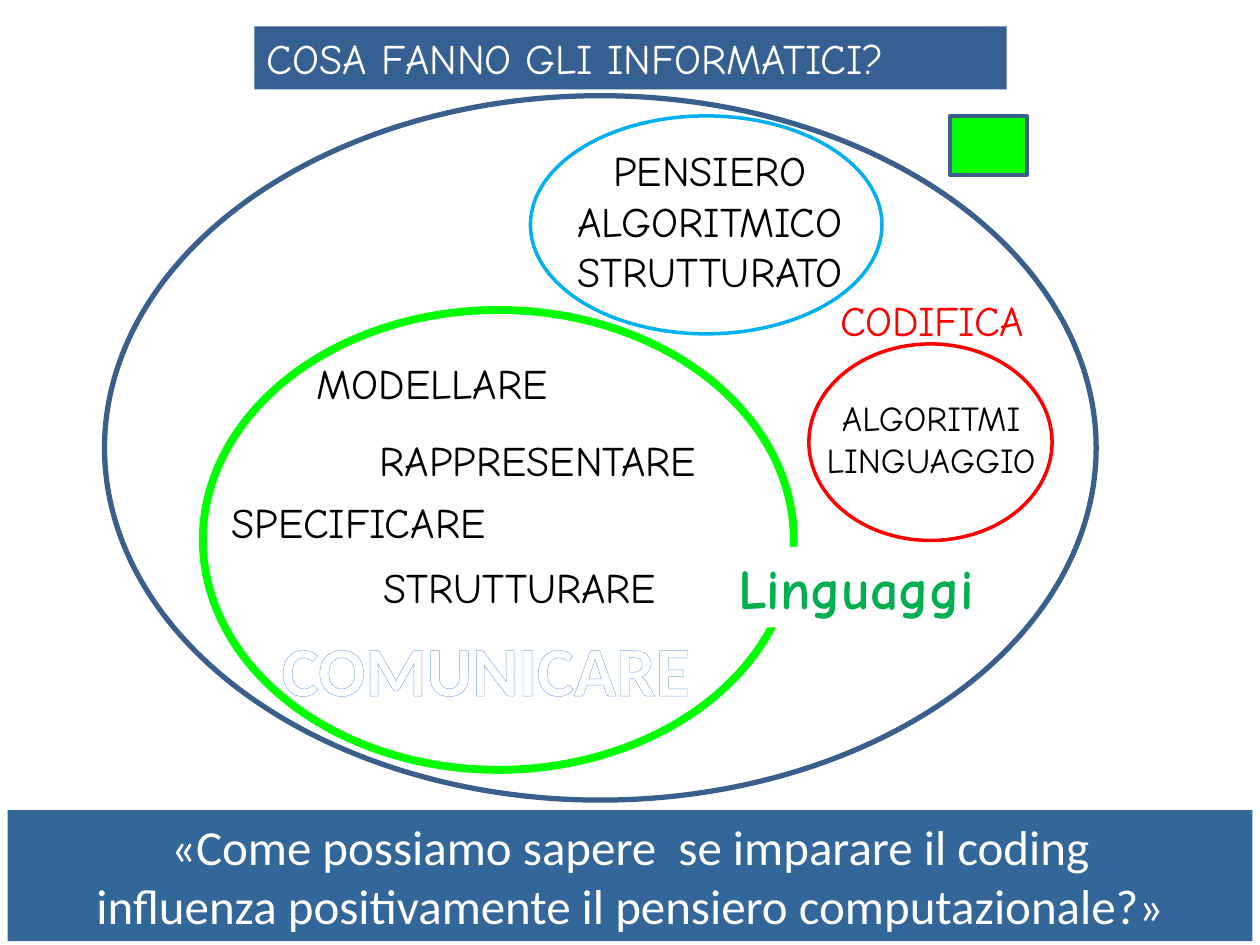
"""Build a slide on what computer scientists do, as nested ovals with labels."""
from lxml import etree
from pptx import Presentation
from pptx import util as u
from pptx.dml.color import RGBColor
from pptx.enum import shapes, text
from pptx.oxml.ns import qn

THEME = {
    "hand": "Comic Neue", "plain": "Calibri",
    "small": 20, "body": 24, "quote": 28, "large": 32, "display": 40,
    "black": "000000", "white": "FFFFFF", "red": "FF0000", "lime": "00FF00",
    "green": "00B050", "sky": "00B0F0", "navy": "3A5F8C", "title": "376092",
    "banner": "336699", "outline": "7EA6EA",
}
OVAL, BOX = shapes.MSO_SHAPE.OVAL, shapes.MSO_SHAPE.RECTANGLE
LEFT, CENTER = text.PP_ALIGN.LEFT, text.PP_ALIGN.CENTER

# kind, (left, top, width, height), fill, line, line width
OUTER = (OVAL, (59.76, 54.72, 566.64, 402.48), "white", "navy", 3)
TITLE_BAR = (BOX, (145.44, 15.12, 429.84, 36), "title", None, 0)
CODING = (OVAL, (462.24, 196.56, 138.96, 112.32), "white", "red", 2)
MODELLING = (OVAL, (115.92, 177.12, 337.68, 262.8), None, "lime", 4.5)
LANGUAGES = (BOX, (406.8, 312.48, 164.88, 46.08), "white", None, 0)
THINKING = (OVAL, (303.12, 66.24, 200.88, 124.56), None, "sky", 2)
BANNER = (BOX, (4.32, 462.96, 711.36, 74.88), "banner", None, 0)
MARKER = (BOX, (542.88, 66.24, 43.92, 33.84), "lime", "navy", 2)

TITLE = ["COSA FANNO GLI INFORMATICI?"]
QUOTE = ["«Come possiamo sapere  se imparare il coding",
         "influenza positivamente il pensiero computazionale?»"]
ACTIVITIES = [
    ("MODELLARE", (165.6, 200.88, 162.72, 36)),
    ("RAPPRESENTARE", (198, 244.8, 218.88, 36)),
    ("SPECIFICARE", (115.92, 280.08, 177.84, 36)),
    ("STRUTTURARE", (199.44, 317.52, 195.12, 36)),
]


def points(place):
    return [u.Pt(length) for length in place]


def color(name):
    return RGBColor.from_string(THEME[name])


def add_figure(slide, kind, place, fill, line, width):
    shape = slide.shapes.add_shape(kind, *points(place))
    shape.shadow.inherit = False
    if fill:
        shape.fill.solid()
        shape.fill.fore_color.rgb = color(fill)
    else:
        shape.fill.background()
    if line:
        shape.line.color.rgb = color(line)
        shape.line.width = u.Pt(width)
    else:
        shape.line.fill.background()
    return shape


def write(shape, lines, ink="black", size="body", font="hand", bold=False,
          align=CENTER, wrap=False):
    frame = shape.text_frame
    frame.word_wrap = wrap
    frame.auto_size = text.MSO_AUTO_SIZE.SHAPE_TO_FIT_TEXT
    frame.text = "\n".join(lines)
    for paragraph in frame.paragraphs:
        paragraph.alignment = align
        paragraph.font.name = THEME[font]
        paragraph.font.size = u.Pt(THEME[size])
        paragraph.font.bold = bold
        paragraph.font.color.rgb = color(ink)
    return shape


def add_label(slide, place, lines, **style):
    return write(slide.shapes.add_textbox(*points(place)), lines, **style)


def outline_text(shape, ink, width):
    for run in shape.text_frame.paragraphs[0].runs:
        run.font.color.rgb = color("white")
        line = etree.Element(qn("a:ln"), w=str(u.Pt(width)))
        fill = etree.SubElement(line, qn("a:solidFill"))
        etree.SubElement(fill, qn("a:srgbClr"), val=THEME[ink])
        run.font._element.insert(0, line)


def main():
    presentation = Presentation()
    presentation.slide_width, presentation.slide_height = u.Pt(720), u.Pt(540)
    slide = presentation.slides.add_slide(presentation.slide_layouts[6])

    add_figure(slide, *OUTER)
    write(add_figure(slide, *TITLE_BAR), TITLE, ink="white", align=LEFT, wrap=True)
    add_figure(slide, *CODING)
    add_label(slide, (456.48, 223.2, 151.2, 55.44), ["ALGORITMI", "LINGUAGGIO"],
              size="small")
    for activity, place in ACTIVITIES:
        add_label(slide, place, [activity])
    add_figure(slide, *MODELLING)
    write(add_figure(slide, *LANGUAGES), ["Linguaggi"], ink="green", size="large",
          bold=True)
    add_label(slide, (473.04, 164.88, 139.68, 36), ["CODIFICA"], ink="red", align=LEFT)
    add_label(slide, (305.28, 79.2, 200.88, 94.32),
              ["PENSIERO", "ALGORITMICO", "STRUTTURATO"])
    add_figure(slide, *THINKING)
    write(add_figure(slide, *BANNER), QUOTE, ink="white", size="quote", font="plain",
          wrap=True)
    communicate = add_label(slide, (145.44, 354.24, 264.24, 55.44), ["COMUNICARE"],
                            ink="white", size="display", font="plain", bold=True,
                            wrap=True)
    outline_text(communicate, "outline", 2.48)
    add_figure(slide, *MARKER)
    presentation.save("out.pptx")


if __name__ == "__main__":
    main()
